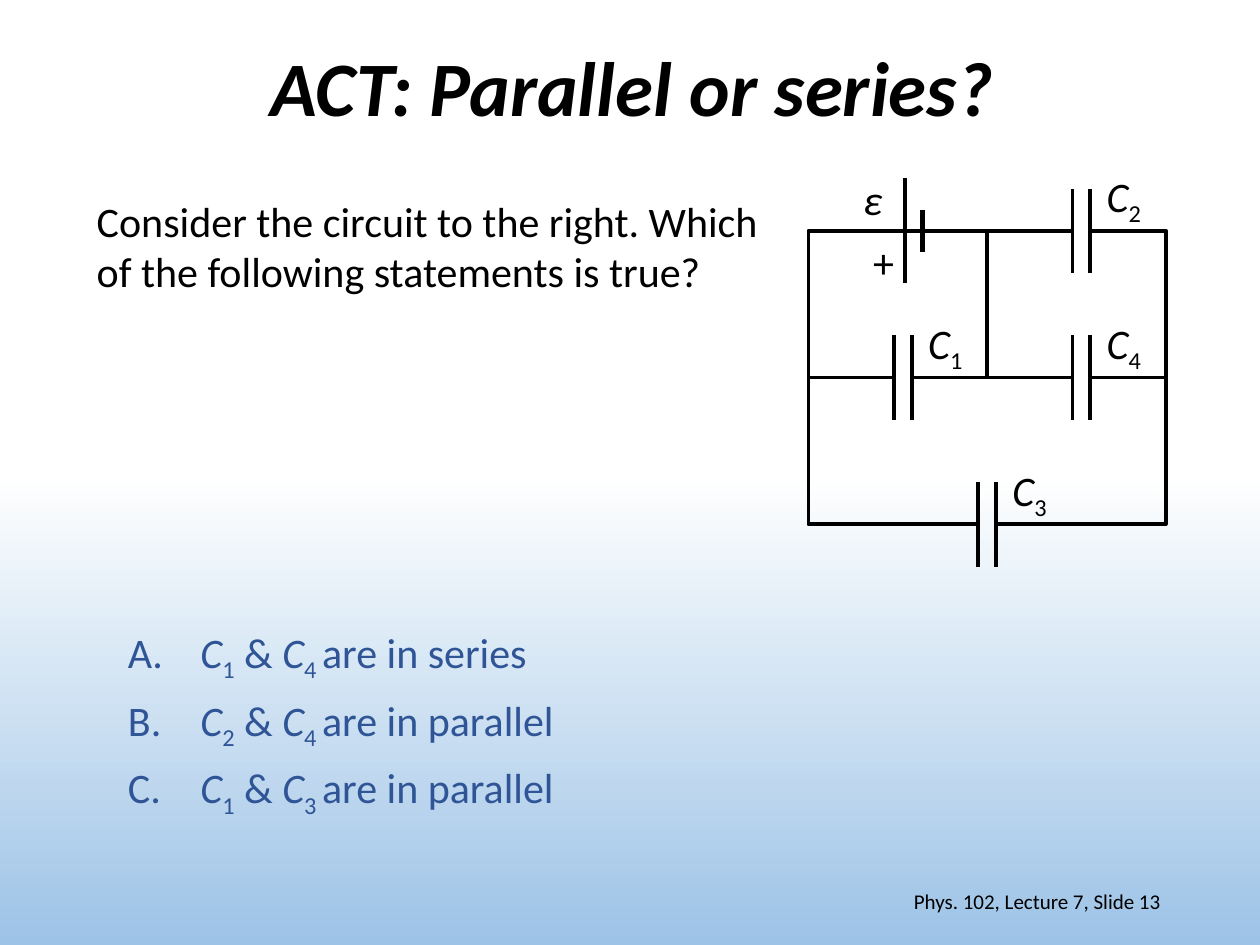
from lxml.etree import SubElement
from pptx import Presentation
from pptx.dml.color import RGBColor
from pptx.enum.shapes import MSO_CONNECTOR, MSO_SHAPE
from pptx.enum.text import MSO_ANCHOR, PP_ALIGN
from pptx.oxml.ns import qn
from pptx.util import Cm, Pt

BLACK, BLUE = "000000", "2F5597"
LEFT, MID, RIGHT = 16.3, 19.9, 23.5
TOP, STEP = 4.65, 2.96
ROWS = [TOP + STEP * n for n in range(3)]


def paint(color, value):
    color.rgb = RGBColor.from_string(value)


class Board:
    def __init__(self, deck):
        self.font = "Calibri"
        self.width = 2.25
        self.slide = deck.slides.add_slide(deck.slide_layouts[5])

    def back(self, *stops):
        fill = self.slide.background.fill
        fill.gradient()
        fill.gradient_angle = 270
        for stop, (pos, value) in zip(fill.gradient_stops, stops):
            stop.position = pos
            paint(stop.color, value)

    def run(self, para, text, size=24, color=BLACK, bold=False, italic=False, sub=False):
        run = para.add_run()
        run.text = text
        font = run.font
        font.name, font.size = self.font, Pt(size)
        font.bold, font.italic = bold, italic
        paint(font.color, color)
        if sub:
            run._r.get_or_add_rPr().set("baseline", "-25000")

    def title(self, text, x, y, w, h):
        shape = self.slide.shapes.title
        shape.left, shape.top, shape.width, shape.height = map(Cm, (x, y, w, h))
        shape.text_frame.vertical_anchor = MSO_ANCHOR.MIDDLE
        para = shape.text_frame.paragraphs[0]
        para.alignment, para.line_spacing = PP_ALIGN.CENTER, 0.9
        self.run(para, text, 44, bold=True, italic=True)

    def box(self, x, y, w, h, align=PP_ALIGN.LEFT, anchor=MSO_ANCHOR.TOP, wrap=True):
        frame = self.slide.shapes.add_textbox(*map(Cm, (x, y, w, h))).text_frame
        frame.word_wrap, frame.vertical_anchor = wrap, anchor
        frame.paragraphs[0].alignment = align
        return frame

    def text(self, text, *place, size=24, italic=False, **kind):
        para = self.box(*place, **kind).paragraphs[0]
        self.run(para, text, size, italic=italic)

    def symbol(self, para, num, color=BLACK):
        """Write C with its subscript."""
        self.run(para, "C", color=color, italic=True)
        self.run(para, num, color=color, sub=True)

    def choices(self, items, *place):
        frame = self.box(*place)
        for n, (one, two, end) in enumerate(items):
            para = frame.add_paragraph() if n else frame.paragraphs[0]
            para.space_after = Pt(6)
            props = para._p.get_or_add_pPr()
            props.set("marL", str(Cm(1.27)))
            props.set("indent", str(-Cm(1.27)))
            SubElement(props, qn("a:buFont"), typeface="+mj-lt")
            SubElement(props, qn("a:buAutoNum"), type="alphaUcPeriod")
            self.run(para, " ", color=BLUE)
            self.symbol(para, one, BLUE)
            self.run(para, " & ", color=BLUE)
            self.symbol(para, two + " ", BLUE)
            self.run(para, end, color=BLUE)

    def line(self, x1, y1, x2, y2, width=None):
        wire = self.slide.shapes.add_connector(
            MSO_CONNECTOR.STRAIGHT, *map(Cm, (x1, y1, x2, y2)))
        paint(wire.line.color, BLACK)
        wire.line.width = Pt(width or self.width)
        SubElement(wire._element.spPr, qn("a:effectLst"))

    def rect(self, x, y, w, h):
        shape = self.slide.shapes.add_shape(MSO_SHAPE.RECTANGLE, *map(Cm, (x, y, w, h)))
        shape.shadow.inherit = False
        return shape

    def loop(self, x, y, w, h):
        shape = self.rect(x, y, w, h)
        shape.fill.background()
        paint(shape.line.color, BLACK)
        shape.line.width = Pt(self.width)

    def gap(self, x, y, size):
        """Break a wire by showing the slide background over it."""
        shape = self.rect(x - size / 2, y - 0.2, size, 0.4)
        shape.rotation = 270
        shape.line.fill.background()
        shape._element.set("useBgFill", "1")

    def cap(self, num, x, y, size=2.5):
        """Draw a capacitor centred on a wire, with its label."""
        self.gap(x, y, size)
        for side in (-0.18, 0.18):
            self.line(x + side, y + 0.85, x + side, y - 0.85)
        frame = self.box(x + 0.22, y - 1.27, 1.27, 1.27,
                         align=PP_ALIGN.CENTER, anchor=MSO_ANCHOR.MIDDLE)
        self.symbol(frame.paragraphs[0], num)

    def cell(self, x, y):
        """Draw a battery with its long plate at x."""
        self.line(x, y + 1.06, x, y - 1.06)
        self.line(x + 0.36, y + 0.42, x + 0.36, y - 0.42, 3)
        self.text("+", x - 0.89, y, 0.94, 1.27, wrap=False)
        self.text("ε", x - 1.09, y - 1.27, 0.89, 1.27, italic=True, wrap=False)


def main():
    deck = Presentation()
    deck.slide_width, deck.slide_height = Cm(25.4), Cm(19.05)
    board = Board(deck)
    board.back((0.5, "FFFFFF"), (1, "9DC3E6"))
    board.title("ACT: Parallel or series?", 1.8, 0, 21.9, 3.68)
    board.text("Phys. 102, Lecture 7, Slide 13", 17.93, 17.65, 5.72, 1.02,
               size=12, align=PP_ALIGN.RIGHT, anchor=MSO_ANCHOR.MIDDLE)
    board.text("Consider the circuit to the right. Which of the following "
               "statements is true?", 1.7, 3.81, 14.6, 2.31)
    board.choices([("1", "4", "are in series"),
                   ("2", "4", "are in parallel"),
                   ("1", "3", "are in parallel")], 2.33, 12.5, 9.53, 3.76)

    board.loop(LEFT, TOP, RIGHT - LEFT, 2 * STEP)
    board.line(MID, ROWS[0], MID, ROWS[1])
    board.line(LEFT, ROWS[1], RIGHT, ROWS[1])
    board.cell(18.24, TOP)
    board.cap("2", 21.8, ROWS[0])
    board.cap("4", 21.8, ROWS[1])
    board.cap("1", 18.2, ROWS[1])
    board.cap("3", MID, ROWS[2], 1.7)
    deck.save("out.pptx")


if __name__ == "__main__":
    main()
